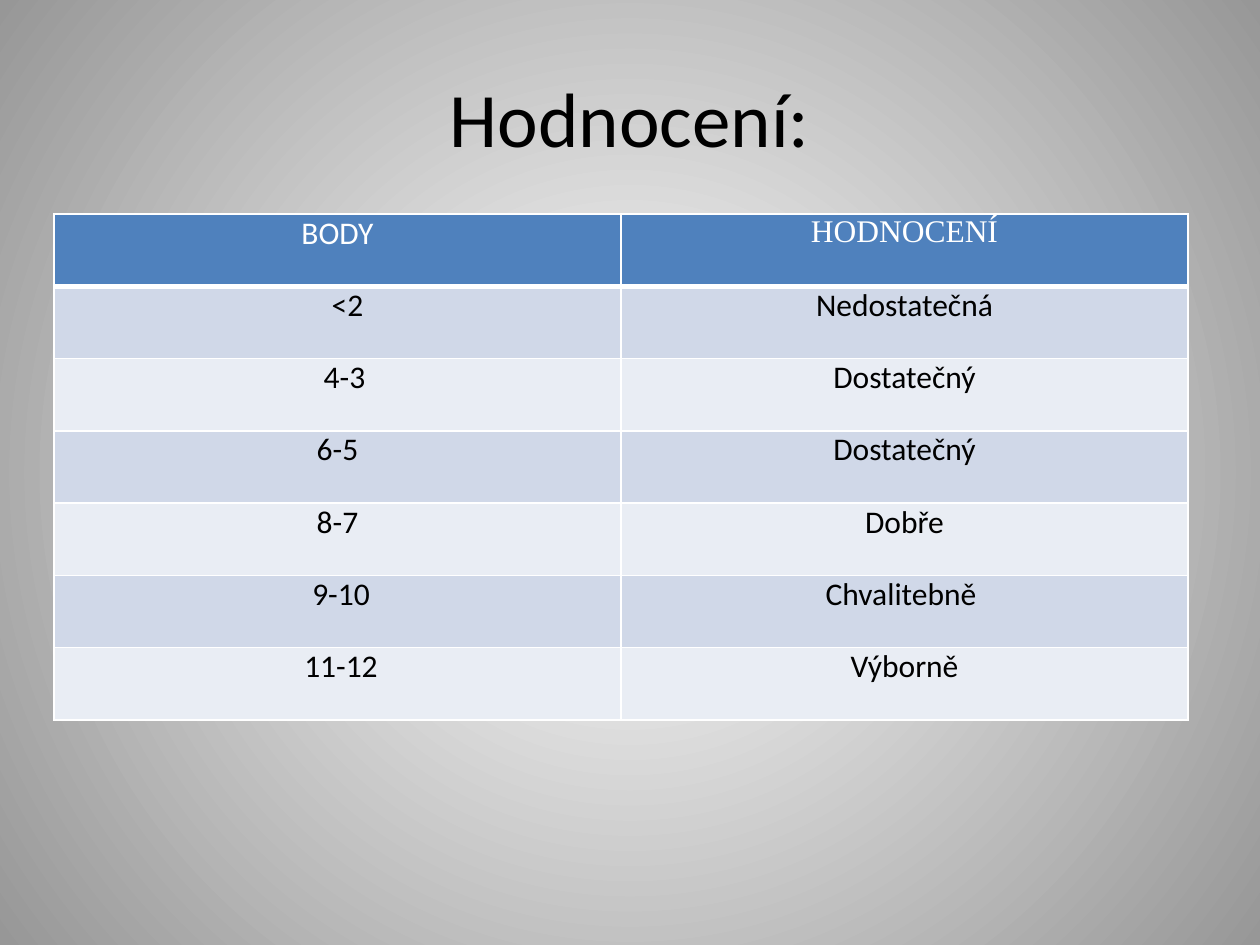
from pptx import Presentation
from pptx.dml.color import RGBColor
from pptx.enum.text import MSO_ANCHOR, PP_ALIGN
from pptx.oxml import parse_xml
from pptx.oxml.ns import nsdecls
from pptx.util import Pt

CENTER, MIDDLE, TOP = PP_ALIGN.CENTER, MSO_ANCHOR.MIDDLE, MSO_ANCHOR.TOP

TITLE = "Hodnocení:"
ROWS = [
    ("BODY", "HODNOCENÍ"),
    ("<2", "Nedostatečná"),
    ("4-3", "Dostatečný"),
    ("6-5", "Dostatečný"),
    ("8-7", "Dobře"),
    ("9-10", "Chvalitebně"),
    ("11-12", "Výborně"),
]
# Extra left and right cell margin in px, for texts set off centre
EXTRA_MARGINS = {"<2": (20, 0), "4-3": (14, 0), "9-10": (7, 0),
                 "11-12": (7, 0), "Chvalitebně": (0, 7)}

SLIDE_SIZE = (1260, 945)
TITLE_BOX = (63, 38, 1134, 158)
TABLE_BOX = (54, 214, 1134, 506)
CELL_MARGIN = 9

THEME = {
    "font": "Calibri", "header_font": "Times New Roman",
    "title_size": 44, "table_size": 18,
    "text": "000000", "header_text": "FFFFFF", "header_fill": "4F81BD",
    "bands": ("D0D8E8", "E9EDF4"),
    "border": "FFFFFF", "border_width": 1, "header_rule": 3,
    "background": ("FFFFFF", "979797"),
}


def px(n):
    return round(n * 914400 / 126)


def rgb(value):
    return RGBColor.from_string(value)


def write(tf, text, font, size, color):
    p = tf.paragraphs[0]
    p.alignment = CENTER
    r = p.add_run()
    r.text = text
    for name, value in {"name": font, "size": Pt(size), "bold": False}.items():
        setattr(r.font, name, value)
    r.font.color.rgb = rgb(color)


def set_background(s):
    """Fill the slide with a circular gradient spreading from its centre."""
    fill = s.background.fill
    fill.gradient()
    for stop, color, position in zip(fill.gradient_stops, THEME["background"], (0, 1)):
        stop.color.rgb = rgb(color)
        stop.position = position
    lin = s.element.find(".//{*}gradFill/{*}lin")
    lin.getparent().replace(lin, parse_xml(
        f'<a:path {nsdecls("a")} path="circle">'
        '<a:fillToRect l="50000" t="50000" r="50000" b="50000"/></a:path>'))


def set_borders(cell, widths):
    tc_pr = cell._tc.get_or_add_tcPr()
    for i, (side, width) in enumerate(widths.items()):
        tc_pr.insert(i, parse_xml(
            f'<a:ln{side} {nsdecls("a")} w="{Pt(width)}"><a:solidFill>'
            f'<a:srgbClr val="{THEME["border"]}"/></a:solidFill></a:ln{side}>'))


def format_cell(cell, text, row, col):
    header = row == 0
    left, right = EXTRA_MARGINS.get(text, (0, 0))
    layout = {"margin_left": px(CELL_MARGIN + left),
              "margin_right": px(CELL_MARGIN + right),
              "margin_top": 0, "margin_bottom": 0, "vertical_anchor": TOP}
    for name, value in layout.items():
        setattr(cell, name, value)
    cell.fill.solid()
    cell.fill.fore_color.rgb = rgb(
        THEME["header_fill"] if header else THEME["bands"][(row - 1) % 2])
    widths = dict.fromkeys("LRTB", THEME["border_width"])
    if header:
        widths["B"] = THEME["header_rule"]
    elif row == 1:
        widths["T"] = THEME["header_rule"]
    set_borders(cell, widths)
    write(cell.text_frame, text,
          THEME["header_font"] if header and col == 1 else THEME["font"],
          THEME["table_size"], THEME["header_text"] if header else THEME["text"])


def add_title(s):
    title = s.shapes.title
    for name, value in zip(("left", "top", "width", "height"), TITLE_BOX):
        setattr(title, name, px(value))
    title.text_frame.vertical_anchor = MIDDLE
    write(title.text_frame, TITLE, THEME["font"], THEME["title_size"], THEME["text"])


def add_grading_table(s):
    table = s.shapes.add_table(len(ROWS), len(ROWS[0]), *map(px, TABLE_BOX)).table
    for i, texts in enumerate(ROWS):
        for j, text in enumerate(texts):
            format_cell(table.cell(i, j), text, i, j)


def main():
    prs = Presentation()
    prs.slide_width, prs.slide_height = map(px, SLIDE_SIZE)
    s = prs.slides.add_slide(prs.slide_layouts[5])
    set_background(s)
    add_title(s)
    add_grading_table(s)
    prs.save("out.pptx")


if __name__ == "__main__":
    main()
